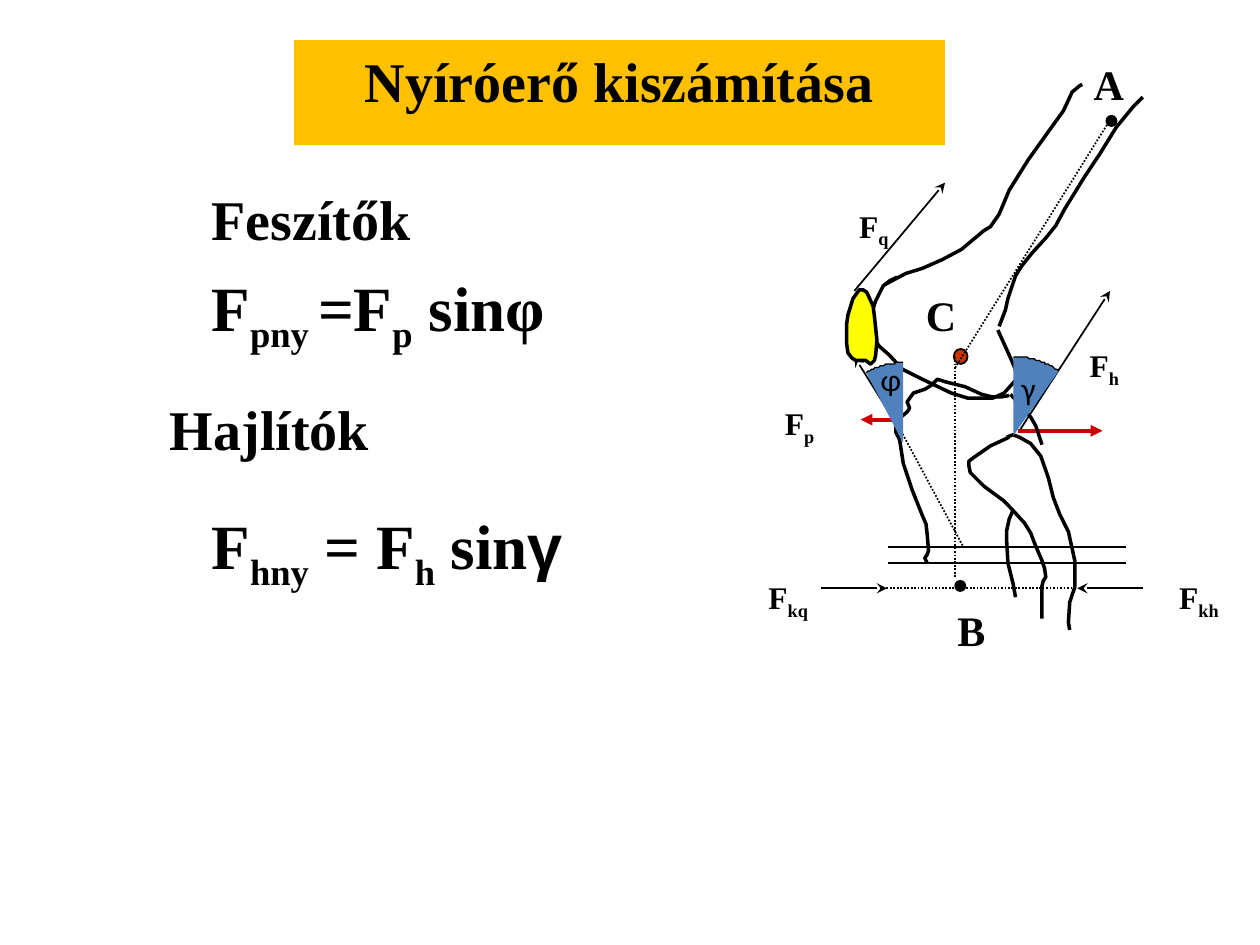
import math
from dataclasses import dataclass
from typing import NamedTuple, Optional

import lxml.etree
import pptx
import pptx.dml.color
import pptx.enum.dml
import pptx.enum.shapes
import pptx.enum.text
import pptx.oxml.ns
import pptx.util

Pt = pptx.util.Pt
qn = pptx.oxml.ns.qn

COLORS = {
    "ink": "000000",
    "banner": "FFC000",
    "shear": "CC0000",
    "joint": "CC3300",
    "patella": "FFFF00",
    "angle": "4F81BD",
}
SERIF = "Times New Roman"
GRID = 0.72  # points per unit of the bone outlines


class Piece(NamedTuple):
    text: str
    subscript: bool = False
    font: Optional[str] = None


@dataclass
class Label:
    left: float
    top: float
    width: float
    height: float
    size: float
    pieces: list[Piece]
    font: str = SERIF
    bold: bool = True


@dataclass
class Line:
    start: tuple[float, float]
    end: tuple[float, float]
    head: Optional[str] = None
    dotted: bool = False
    color: str = "ink"
    weight: float = 1


@dataclass
class Dot:
    left: float
    top: float
    width: float
    height: float
    color: str = "ink"


@dataclass
class Wedge:
    apex: tuple[float, float]
    radius: float
    first: int  # degrees clockwise from straight up
    last: int


def rgb(name: str) -> pptx.dml.color.RGBColor:
    return pptx.dml.color.RGBColor.from_string(COLORS[name])


def style_shape(shape, fill: Optional[str], weight: float) -> None:
    shape.shadow.inherit = False
    if fill:
        shape.fill.solid()
        shape.fill.fore_color.rgb = rgb(fill)
    else:
        shape.fill.background()
    if weight:
        shape.line.color.rgb = rgb("ink")
        shape.line.width = Pt(weight)
    else:
        shape.line.fill.background()


def style_text(shape, size: float, font: str, bold: bool) -> None:
    frame = shape.text_frame
    frame.word_wrap = True
    frame.auto_size = pptx.enum.text.MSO_AUTO_SIZE.SHAPE_TO_FIT_TEXT
    frame.vertical_anchor = pptx.enum.text.MSO_ANCHOR.TOP
    paragraph = frame.paragraphs[0]
    before = lxml.etree.SubElement(paragraph._p.get_or_add_pPr(), qn("a:spcBef"))
    lxml.etree.SubElement(before, qn("a:spcPct"), val="50000")
    for run in paragraph.runs:
        run.font.size = Pt(size)
        run.font.name = font
        run.font.bold = bold
        run.font.color.rgb = rgb("ink")


def draw_label(shapes, label: Label) -> None:
    box = shapes.add_textbox(Pt(label.left), Pt(label.top), Pt(label.width), Pt(label.height))
    paragraph = box.text_frame.paragraphs[0]
    for piece in label.pieces:
        paragraph.add_run().text = piece.text
    style_text(box, label.size, label.font, label.bold)
    for run, piece in zip(paragraph.runs, label.pieces):
        if piece.subscript:
            run._r.get_or_add_rPr().set("baseline", "-25000")
        if piece.font:
            run.font.name = piece.font


def draw_line(shapes, line: Line) -> None:
    connector = shapes.add_connector(
        pptx.enum.shapes.MSO_CONNECTOR.STRAIGHT, *(Pt(v) for v in line.start + line.end))
    connector.line.color.rgb = rgb(line.color)
    connector.line.width = Pt(line.weight)
    if line.dotted:
        connector.line.dash_style = pptx.enum.dml.MSO_LINE.ROUND_DOT
    properties = connector._element.spPr
    if line.head:
        lxml.etree.SubElement(properties.find(qn("a:ln")), qn("a:tailEnd"), type=line.head)
    lxml.etree.SubElement(properties, qn("a:effectLst"))


def draw_dot(shapes, dot: Dot) -> None:
    oval = shapes.add_shape(pptx.enum.shapes.MSO_SHAPE.OVAL,
                            Pt(dot.left), Pt(dot.top), Pt(dot.width), Pt(dot.height))
    style_shape(oval, dot.color, 1)


def draw_outline(shapes, points: list, unit: float, fill: Optional[str] = None,
                 weight: float = 2) -> None:
    builder = shapes.build_freeform(*points[0], scale=Pt(unit))
    builder.add_line_segments(points[1:], close=fill is not None)
    style_shape(builder.convert_to_shape(), fill, weight)


def draw_wedge(shapes, wedge: Wedge) -> None:
    x, y = wedge.apex
    arc = [(x + wedge.radius * math.sin(math.radians(a)),
            y - wedge.radius * math.cos(math.radians(a)))
           for a in range(wedge.first, wedge.last + 1)]
    draw_outline(shapes, arc + [wedge.apex], 1, "angle", 0)
    draw_outline(shapes, arc, 1, weight=0.75)


def force(left: float, top: float, width: float, index: str) -> Label:
    return Label(left, top, width, 28.8, 18, [Piece("F"), Piece(index, True)])


def point_name(left: float, top: float, name: str) -> Label:
    return Label(left, top, 41.8, 36, 24, [Piece(name)])


LABELS = [
    # Headings and formulas
    Label(113.8, 102.2, 318, 45.4, 32, [Piece("Feszítők")]),
    Label(113.8, 149.8, 252, 50.4, 36, [
        Piece("F"), Piece("pny ", True), Piece("=F"), Piece("p", True), Piece(" sinφ")]),
    Label(90, 221.8, 318, 45.4, 32, [Piece("Hajlítók")]),
    Label(113.8, 285.8, 282, 50.4, 36, [
        Piece("F"), Piece("hny", True), Piece(" = F"), Piece("h", True), Piece(" sin"),
        Piece("γ", font="Arial")]),
    # Points, forces and angles of the knee
    point_name(617.8, 30.2, "A"), point_name(540, 342, "B"), point_name(522, 162, "C"),
    force(441.4, 227.5, 51.8, "p"), force(483.8, 114.5, 46.8, "q"),
    force(615.6, 194.4, 42.5, "h"), force(432, 326.9, 46.8, "kq"),
    force(666.7, 326.9, 46.8, "kh"),
    Label(496.1, 202.3, 23, 28.8, 18, [Piece("φ")], "Calibri", False),
    Label(576.7, 207.4, 28.1, 28.8, 18, [Piece("γ")], "Calibri", False),
]
DOTS = [Dot(545, 199.4, 7.9, 8.6, "joint"), Dot(632.2, 66.2, 5.8, 5.8),
        Dot(545.8, 331.9, 5.8, 5.8)]
LINES = [
    # Muscle and external forces
    Line((511.9, 241.9), (488.2, 203.8), "stealth"),
    Line((488.2, 166.3), (540, 104.4), "stealth"),
    Line((582.5, 246.2), (634.3, 166.3), "stealth"),
    Line((469.4, 336.2), (506.9, 336.2), "stealth"),
    Line((653, 336.2), (615.6, 336.2), "stealth"),
    # Shear components
    Line((509.8, 239.8), (491.8, 239.8), "triangle", color="shear", weight=2.25),
    Line((581.8, 246.2), (630, 246.2), "triangle", color="shear", weight=2.25),
    # Axes and the cuff
    Line((502.6, 336.2), (615.6, 336.2), dotted=True),
    Line((545.8, 210.2), (635.8, 66.2), dotted=True),
    Line((508.3, 234), (550.1, 311.8), dotted=True),
    Line((545.8, 203.8), (545.8, 329.8), dotted=True),
    Line((507.6, 312.5), (643.7, 312.5)), Line((507.6, 321.8), (643.7, 321.8)),
]
BONES = [
    # Fibula and calf
    [(801, 347), (786, 354), (773, 363), (769, 366), (769, 370), (770, 375), (781, 386),
     (796, 397), (802, 403), (813, 415), (818, 423), (821, 431), (827, 445), (829, 451),
     (830, 458), (828, 461), (827, 465), (827, 491)],
    [(799, 347), (804, 345), (809, 347), (818, 352), (826, 362), (832, 379), (836, 395),
     (841, 408), (848, 422), (853, 445), (853, 466), (849, 478), (848, 494), (849, 500)],
    [(802, 313), (810, 322), (818, 331), (822, 338), (827, 353)],
    # Tibia
    [(801, 314), (795, 315), (787, 315), (779, 313), (766, 307), (750, 303), (744, 301),
     (739, 306), (734, 309), (725, 312), (720, 319), (722, 324), (720, 327), (714, 332),
     (711, 339), (711, 343), (714, 349), (717, 368), (724, 389), (732, 409), (735, 416),
     (736, 425), (737, 437), (736, 440), (734, 443), (736, 447)],
    [(804, 405), (801, 412), (799, 421), (799, 430), (800, 447), (804, 463), (806, 474)],
    # Femur
    [(712, 220), (706, 223), (701, 227), (695, 239), (693, 245), (693, 268), (698, 275),
     (706, 282), (716, 293), (732, 301), (755, 312), (768, 316), (788, 316), (797, 312),
     (805, 303), (807, 300), (807, 296), (802, 284), (792, 262)],
    [(702, 226), (719, 217), (732, 213), (748, 206), (763, 198), (781, 183), (786, 180),
     (793, 170), (801, 151), (816, 127), (831, 106), (844, 88), (851, 73), (857, 68),
     (859, 67)],
    [(793, 259), (798, 246), (800, 237), (806, 219), (811, 211), (819, 201), (830, 189),
     (838, 179), (845, 166), (861, 140), (873, 122), (886, 101), (900, 84), (907, 77)],
]
PATELLA = [(682, 230), (677, 237), (673, 250), (672, 257), (672, 273), (673, 280), (676, 284),
           (679, 286), (687, 286), (691, 289), (694, 286), (695, 282), (696, 270), (694, 251),
           (693, 243), (688, 232), (685, 230)]
WEDGES = [Wedge((516.2, 252.7), 45.4, -28, 0), Wedge((578.9, 249.1), 45.4, 0, 35)]


def main() -> None:
    deck = pptx.Presentation()
    deck.slide_width, deck.slide_height = Pt(720), Pt(540)
    slide = deck.slides.add_slide(deck.slide_layouts[5])
    shapes = slide.shapes

    # Title banner
    title = shapes.title
    title.left, title.top, title.width, title.height = Pt(168), Pt(23), Pt(372), Pt(46)
    title.fill.solid()
    title.fill.fore_color.rgb = rgb("banner")
    title.text_frame.text = "Nyíróerő kiszámítása"
    title.text_frame.paragraphs[0].alignment = pptx.enum.text.PP_ALIGN.CENTER
    style_text(title, 32, SERIF, True)

    # Knee diagram
    for dot in DOTS:
        draw_dot(shapes, dot)
    for line in LINES:
        draw_line(shapes, line)
    for bone in BONES:
        draw_outline(shapes, bone, GRID)
    draw_outline(shapes, PATELLA, GRID, "patella")
    for wedge in WEDGES:
        draw_wedge(shapes, wedge)

    # Wording
    for label in LABELS:
        draw_label(shapes, label)
    deck.save("out.pptx")


if __name__ == "__main__":
    main()
